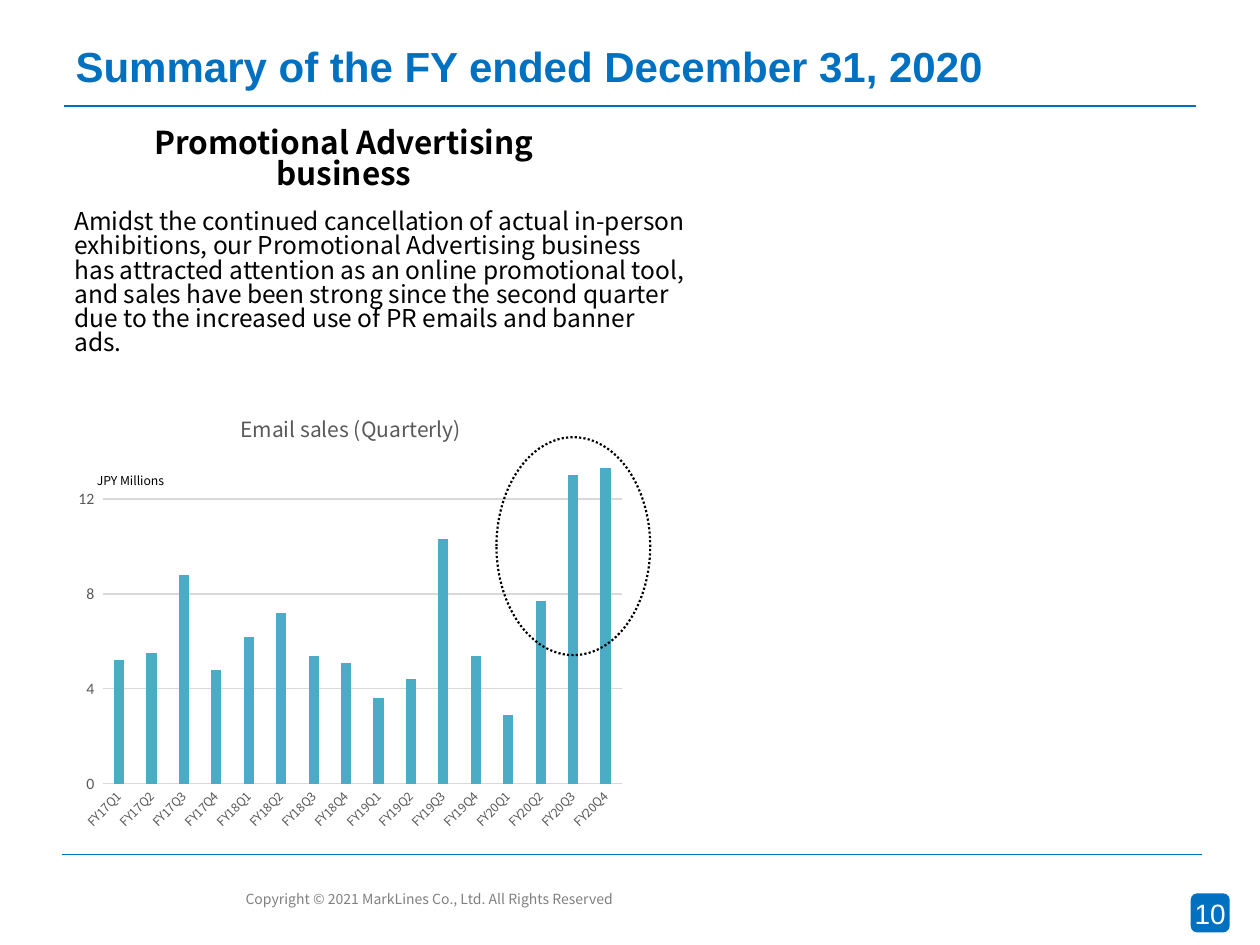
from dataclasses import dataclass

from lxml import etree
from pptx import Presentation
from pptx.chart.data import CategoryChartData
from pptx.dml.color import RGBColor
from pptx.enum.chart import XL_CHART_TYPE, XL_TICK_MARK
from pptx.enum.dml import MSO_LINE
from pptx.enum.shapes import MSO_CONNECTOR, MSO_SHAPE
from pptx.enum.text import MSO_ANCHOR, PP_ALIGN
from pptx.oxml import parse_xml
from pptx.oxml.ns import nsdecls, qn
from pptx.util import Inches, Pt

COLUMN = XL_CHART_TYPE.COLUMN_CLUSTERED
NO_TICK = XL_TICK_MARK.NONE
DOTS = MSO_LINE.ROUND_DOT
STRAIGHT = MSO_CONNECTOR.STRAIGHT
ROUNDED, OVAL = MSO_SHAPE.ROUNDED_RECTANGLE, MSO_SHAPE.OVAL
TOP, MIDDLE = MSO_ANCHOR.TOP, MSO_ANCHOR.MIDDLE
LEFT, CENTER = PP_ALIGN.LEFT, PP_ALIGN.CENTER


@dataclass(frozen=True)
class Theme:
    blue: RGBColor = RGBColor.from_string("0070C0")
    teal: RGBColor = RGBColor.from_string("4BACC6")
    black: RGBColor = RGBColor.from_string("000000")
    white: RGBColor = RGBColor.from_string("FFFFFF")
    dark: RGBColor = RGBColor.from_string("595959")
    gray: RGBColor = RGBColor.from_string("808080")
    pale: RGBColor = RGBColor.from_string("D9D9D9")
    sans: str = "Arial"
    plot: str = "Calibri"
    text: str = "Noto Sans CJK JP"
    title: int = 24
    head: int = 18
    page: int = 16
    body: int = 14
    chart: int = 12
    base: int = 10
    value: int = 9
    foot: int = 8
    small: int = 7


theme = Theme()


def style(font, name, size, color, bold=False):
    font.name = name
    font.size = Pt(size)
    font.color.rgb = color
    font.bold = bold


def place(box, **parts):
    layout = parse_xml(f"<c:layout {nsdecls('c')}><c:manualLayout/></c:layout>")
    for tag, value in parts.items():
        etree.SubElement(layout[0], qn(f"c:{tag}"), val=str(value))
    for old in box.findall(qn("c:layout")):
        box.remove(old)
    box.insert(1 if box.tag == qn("c:title") else 0, layout)


deck = Presentation()
deck.slide_width, deck.slide_height = Inches(10), Inches(7.5)
slide = deck.slides.add_slide(deck.slide_layouts[5])
shapes = slide.shapes

title = shapes.title
title.left, title.top = Inches(0.5), Inches(0.36)
title.width, title.height = Inches(8.73), Inches(0.32)
title.text_frame.text = "Summary of the FY ended December 31, 2020"
title.text_frame.vertical_anchor = MIDDLE
title.text_frame.paragraphs[0].alignment = LEFT
style(title.text_frame.paragraphs[0].font, theme.sans, theme.title, theme.blue, True)

for left, right, top, weight in ((0.51, 9.49, 0.84, 1), (0.49, 9.54, 6.78, 0.75)):
    rule = shapes.add_connector(
        STRAIGHT, Inches(left), Inches(top), Inches(right), Inches(top))
    rule.line.color.rgb = theme.blue
    rule.line.width = Pt(weight)
    etree.SubElement(rule._element.spPr, qn("a:effectLst"))

sales = (5.2, 5.5, 8.8, 4.8, 6.2, 7.2, 5.4, 5.1,
         3.6, 4.4, 10.3, 5.4, 2.9, 7.7, 13, 13.3)
data = CategoryChartData()
data.categories = [f"FY{year}Q{term}" for year in range(17, 21) for term in range(1, 5)]
data.add_series("Series 1", [round(value * 1000000) for value in sales])
chart = shapes.add_chart(
    COLUMN, Inches(0.53), Inches(3.04), Inches(4.49), Inches(3.62), data).chart
style(chart.font, theme.plot, theme.base, theme.black)
chart.has_legend = False
chart.has_title = True
chart.chart_title.text_frame.text = "Email sales (Quarterly)"
style(chart.chart_title.text_frame.paragraphs[0].font,
      theme.text, theme.chart, theme.dark)
place(chart.chart_title._element, xMode="edge", yMode="edge", x=0.3, y=0.05)
place(chart._chartSpace.chart.plotArea, layoutTarget="inner",
      xMode="edge", yMode="edge", x=0.064, y=0.15, w=0.917, h=0.729)

plot = chart.plots[0]
plot.gap_width = 219
plot.overlap = -27
plot.vary_by_categories = False
bars = plot.series[0]
bars.format.fill.solid()
bars.format.fill.fore_color.rgb = theme.teal
bars.invert_if_negative = False

terms = chart.category_axis
terms.major_tick_mark = NO_TICK
terms.format.line.color.rgb = theme.pale
terms.format.line.width = Pt(0.75)
style(terms.tick_labels.font, theme.text, theme.small, theme.dark)
terms._element.find(qn("c:txPr")).find(qn("a:bodyPr")).set("rot", "-2700000")

scale = chart.value_axis
scale.minimum_scale = 0
scale.maximum_scale = 14000000
scale.major_unit = 4000000
scale.major_tick_mark = NO_TICK
scale.format.line.fill.background()
scale.major_gridlines.format.line.color.rgb = theme.pale
scale.major_gridlines.format.line.width = Pt(0.75)
scale.tick_labels.number_format = r"#,##0,,_ ;[Red]\-#,##0,,\ "
scale.tick_labels.number_format_is_linked = False
style(scale.tick_labels.font, theme.plot, theme.value, theme.dark)

ring = shapes.add_shape(OVAL, Inches(3.94), Inches(3.47), Inches(1.22), Inches(1.73))
ring.shadow.inherit = False
ring.fill.background()
ring.line.color.rgb = theme.black
ring.line.width = Pt(1.25)
ring.line.dash_style = DOTS

story = (
    "Amidst the continued cancellation of actual in-person exhibitions, our "
    "Promotional Advertising business has attracted attention as an online "
    "promotional tool, and sales have been strong since the second quarter due to "
    "the increased use of PR emails and banner ads."
)
notice = "Copyright © 2021 MarkLines Co., Ltd. All Rights Reserved"
notes = (
    ("Promotional Advertising business", (0.76, 0.98, 4.04, 0.36),
     theme.head, theme.black, True, CENTER, TOP, 0, 0.82),
    (story, (0.59, 1.63, 4.96, 1.02),
     theme.body, theme.black, False, LEFT, TOP, 0, 0.82),
    ("JPY Millions", (0.67, 3.72, 1.57, 0.18),
     theme.small, theme.black, False, LEFT, MIDDLE, 0.1, 1),
    (notice, (1.85, 7.02, 3.78, 0.24),
     theme.foot, theme.gray, False, LEFT, TOP, 0.1, 1),
)
for words, spot, size, color, bold, align, anchor, inset, pitch in notes:
    frame = shapes.add_textbox(*map(Inches, spot)).text_frame
    frame.word_wrap = True
    frame.margin_left = Inches(inset)
    frame.vertical_anchor = anchor
    frame.text = words
    para = frame.paragraphs[0]
    para.alignment = align
    para.line_spacing = pitch
    style(para.font, theme.text, size, color, bold)

badge = shapes.add_shape(
    ROUNDED, Inches(9.45), Inches(7.09), Inches(0.31), Inches(0.31))
badge.shadow.inherit = False
badge.fill.solid()
badge.fill.fore_color.rgb = theme.blue
badge.line.fill.background()
badge.text_frame.word_wrap = False
badge.text_frame.vertical_anchor = MIDDLE
badge.text_frame.text = "10"
badge.text_frame.paragraphs[0].alignment = CENTER
style(badge.text_frame.paragraphs[0].font, theme.sans, theme.page, theme.white)

deck.save("out.pptx")
